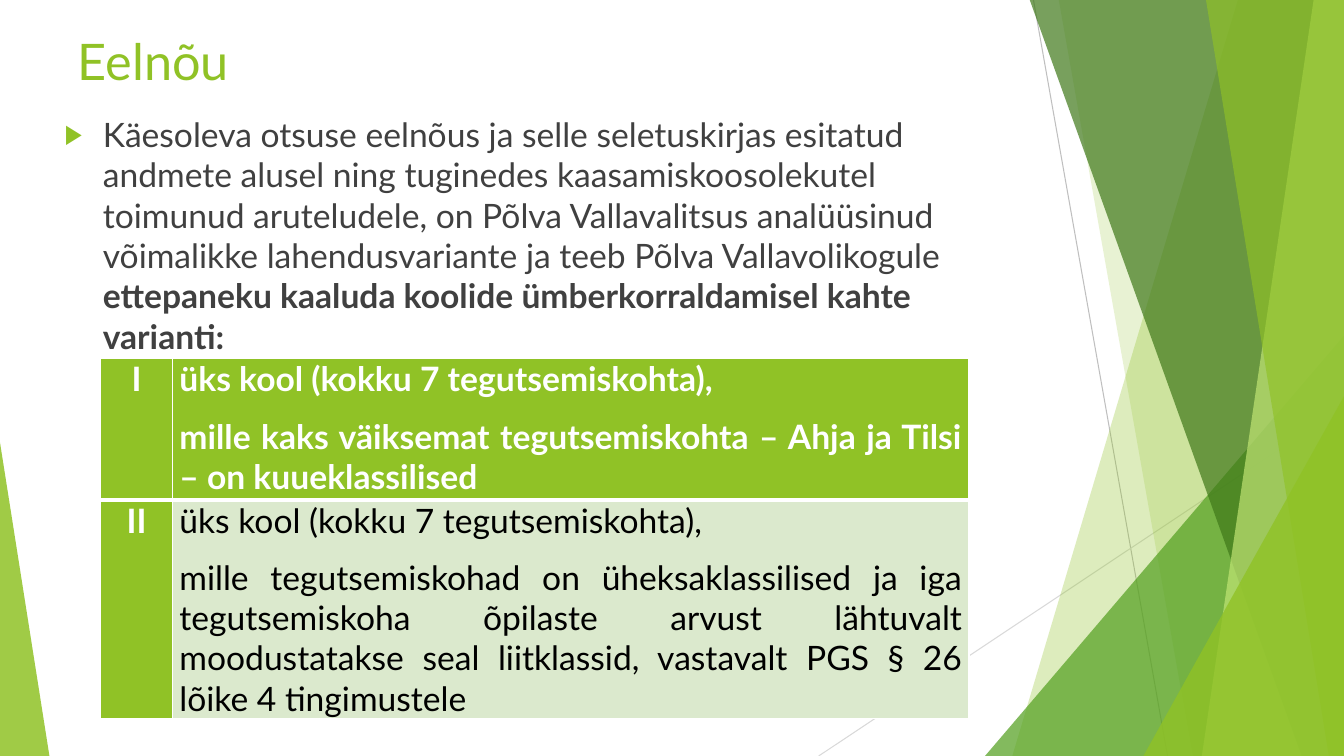
from lxml import etree
from pptx import Presentation
from pptx.dml.color import RGBColor
from pptx.enum.shapes import MSO_CONNECTOR, MSO_SHAPE
from pptx.enum.text import MSO_ANCHOR, MSO_AUTO_SIZE, PP_ALIGN
from pptx.oxml.ns import qn
from pptx.util import Inches, Pt

STRAIGHT = MSO_CONNECTOR.STRAIGHT
TRIANGLE = MSO_SHAPE.ISOSCELES_TRIANGLE
TOP = MSO_ANCHOR.TOP
NO_FIT = MSO_AUTO_SIZE.NONE
LEFT, CENTER, JUSTIFY = PP_ALIGN.LEFT, PP_ALIGN.CENTER, PP_ALIGN.JUSTIFY

GREEN, PALE_GREEN, WHITE, BLACK, GREY = "90C226", "DBE9CD", "FFFFFF", "000000", "404040"


def paint(color_owner, hex_color, opacity=100):
    """Give a fill or a font a solid colour, with opacity in percent for fills."""
    if hasattr(color_owner, "solid"):
        color_owner.solid()
    color = color_owner.fore_color if hasattr(color_owner, "fore_color") else color_owner.color
    color.rgb = RGBColor.from_string(hex_color)
    if opacity < 100:
        for srgb in color_owner._xPr.iter(qn("a:srgbClr")):
            etree.SubElement(srgb, qn("a:alpha"), val=str(opacity * 1000))


def add_run(paragraph, text, size, hex_color, bold=False):
    run = paragraph.add_run()
    run.text = text
    run.font.name = "Lato"
    run.font.size = Pt(size)
    run.font.bold = bold
    paint(run.font, hex_color)


prs = Presentation()
prs.slide_width, prs.slide_height = Inches(13.33), Inches(7.5)
slide = prs.slides.add_slide(prs.slide_layouts[1])
shapes = slide.shapes
title, body = slide.placeholders

# Thin lines behind the green facets
for x1, y1, x2, y2, hex_color in [
    (10.25, 0, 11.58, 7.5, "BFBFBF"),
    (13.33, 4.03, 8.12, 7.5, "D9D9D9"),
]:
    ray = shapes.add_connector(STRAIGHT, Inches(x1), Inches(y1), Inches(x2), Inches(y2))
    ray.line.width = Pt(0.75)
    paint(ray.line.fill, hex_color)
    etree.SubElement(ray.element.spPr, qn("a:effectLst"))

# Facets reach the right edge: bands by top and bottom left corner,
# triangles by left, top, width and apex position
facets = [
    ("band", (12.28, 10.04), GREEN, 30),
    ("band", (10.5, 11.83), GREEN, 20),
    ("triangle", (9.77, 3.33, 3.56, 1), "54A021", 72),
    ("band", (10.21, 12.91), "3F7819", 70),
    ("band", (13.03, 11.92), "C0E474", 70),
    ("band", (11.96, 13.18), GREEN, 65),
    ("triangle", (11.34, 3.93, 1.99, 1), GREEN, 80),
    ("triangle", (0, 4.39, 0.49, 0), GREEN, 85),
]
for outline, measures, hex_color, opacity in facets:
    if outline == "band":
        top_x, bottom_x = measures
        builder = shapes.build_freeform(Inches(top_x), Inches(-0.01))
        corners = [(13.33, -0.01), (13.33, 7.5), (bottom_x, 7.5)]
        builder.add_line_segments([(Inches(x), Inches(y)) for x, y in corners])
        facet = builder.convert_to_shape()
    else:
        left, top, width, apex = measures
        facet = shapes.add_shape(
            TRIANGLE, Inches(left), Inches(top), Inches(width), Inches(7.5 - top))
        facet.adjustments[0] = apex
    facet.shadow.inherit = False
    facet.line.fill.background()
    paint(facet.fill, hex_color, opacity)

# Title and introduction, in front of the facets
for holder, (left, top, width, height) in [
    (title, (0.67, 0.25, 9.4, 1.44)),
    (body, (0.54, 1.08, 9.53, 4.24)),
]:
    shapes.element.append(holder.element)
    holder.left, holder.top = Inches(left), Inches(top)
    holder.width, holder.height = Inches(width), Inches(height)
    holder.text_frame.word_wrap = True
    holder.text_frame.auto_size = NO_FIT
    holder.text_frame.vertical_anchor = TOP

heading = title.text_frame.paragraphs[0]
heading.alignment = LEFT
add_run(heading, "Eelnõu", 36, GREEN)

intro = body.text_frame.paragraphs[0]
intro.space_before = Pt(10)
add_run(intro, "Käesoleva otsuse eelnõus ja selle seletuskirjas esitatud andmete alusel "
        "ning tuginedes kaasamiskoosolekutel toimunud aruteludele, on Põlva Vallavalitsus "
        "analüüsinud võimalikke lahendusvariante ja teeb Põlva Vallavolikogule ", 24, GREY)
add_run(intro, "ettepaneku kaaluda koolide ümberkorraldamisel kahte varianti:", 24, GREY, True)
intro_props = intro._p.get_or_add_pPr()
intro_props.set("marL", str(Inches(0.38)))
intro_props.set("indent", str(Inches(-0.38)))
bullet_color = etree.SubElement(intro_props, qn("a:buClr"))
etree.SubElement(bullet_color, qn("a:srgbClr"), val=GREEN)
etree.SubElement(intro_props, qn("a:buSzPct"), val="80000")
etree.SubElement(intro_props, qn("a:buChar"), char="▶")

# The two variants
variants = [
    ("I", ["üks kool (kokku 7 tegutsemiskohta),",
           "mille kaks väiksemat tegutsemiskohta – Ahja ja Tilsi – on kuueklassilised"]),
    ("II", ["üks kool (kokku 7 tegutsemiskohta),",
            "mille tegutsemiskohad on üheksaklassilised ja iga tegutsemiskoha õpilaste "
            "arvust lähtuvalt moodustatakse seal liitklassid, vastavalt PGS § 26 lõike 4 "
            "tingimustele"]),
]
variant_table = shapes.add_table(
    2, 2, Inches(1), Inches(3.56), Inches(8.61), Inches(3.56)).table
variant_table.horz_banding = False
for column, width in zip(variant_table.columns, (0.71, 7.9)):
    column.width = Inches(width)
for row, height in zip(variant_table.rows, (1.4, 2.16)):
    row.height = Inches(height)

for row_index, (numeral, description) in enumerate(variants):
    for column_index, lines in enumerate([[numeral], description]):
        cell = variant_table.cell(row_index, column_index)
        is_plain = row_index == 1 and column_index == 1
        cell.margin_left = cell.margin_right = Inches(0.07)
        cell.margin_top = cell.margin_bottom = 0
        cell.vertical_anchor = TOP
        paint(cell.fill, PALE_GREEN if is_plain else GREEN)

        frame = cell.text_frame
        for line_index, text in enumerate(lines):
            paragraph = frame.add_paragraph() if line_index else frame.paragraphs[0]
            paragraph.alignment = JUSTIFY if column_index else CENTER
            paragraph.space_before = paragraph.space_after = Pt(6)
            add_run(paragraph, text, 24, BLACK if is_plain else WHITE, not is_plain)

        # The rule between the two rows is thicker than the others
        divider = "lnT" if row_index else "lnB"
        cell_props = cell._tc.get_or_add_tcPr()
        for position, side in enumerate(("lnL", "lnR", "lnT", "lnB")):
            border = etree.Element(qn(f"a:{side}"), w=str(Pt(3 if side == divider else 1)))
            border_fill = etree.SubElement(border, qn("a:solidFill"))
            etree.SubElement(border_fill, qn("a:srgbClr"), val=WHITE)
            cell_props.insert(position, border)

prs.save("out.pptx")
